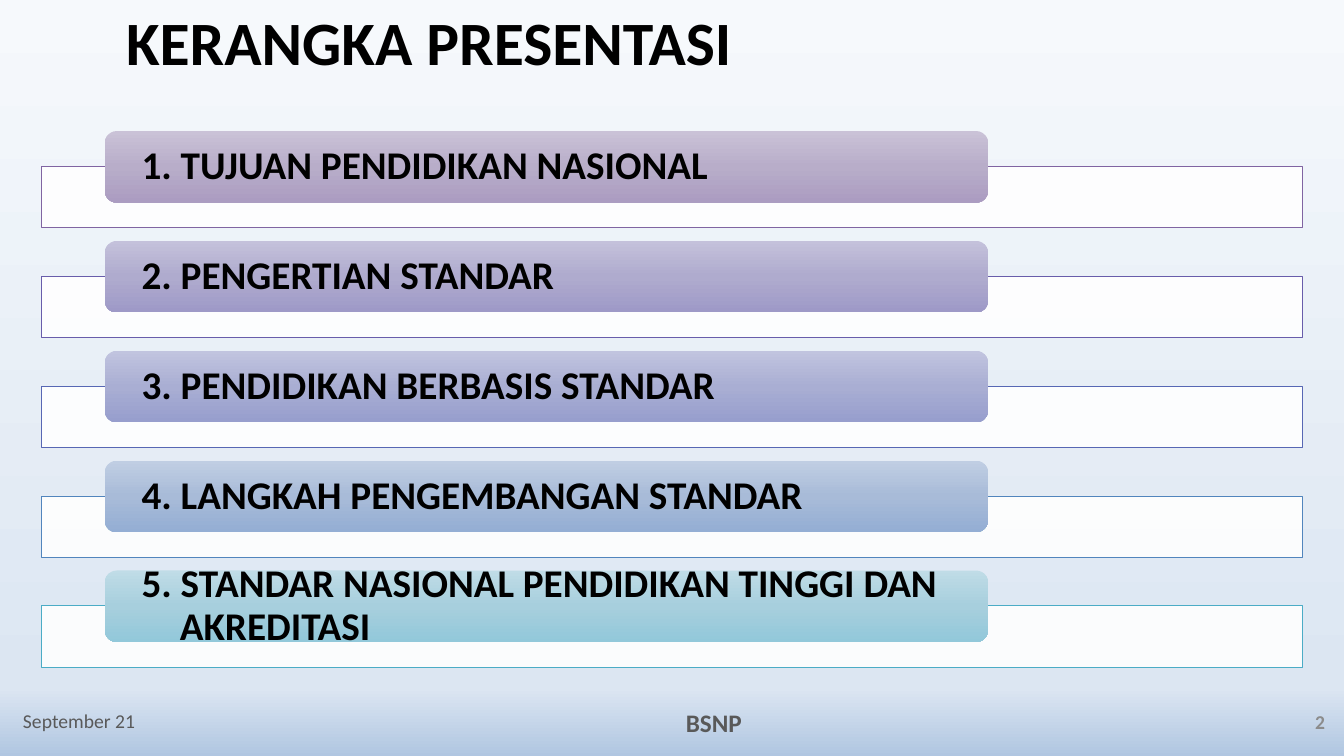
from dataclasses import dataclass

import lxml.etree
import pptx
import pptx.dml.color
import pptx.enum.shapes
import pptx.enum.text
import pptx.oxml.ns
import pptx.util

RGB = pptx.dml.color.RGBColor
ALIGN = pptx.enum.text.PP_ALIGN
SHAPES = pptx.enum.shapes.MSO_SHAPE
qn = pptx.oxml.ns.qn

SLIDE_WIDTH, SLIDE_HEIGHT = 13.33, 7.5
FONT = "Calibri"
BLACK = RGB(0x00, 0x00, 0x00)
WHITE = RGB(0xFF, 0xFF, 0xFF)
FOOTER_GREY = RGB(0x59, 0x59, 0x59)
NUMBER_GREY = RGB(0x8C, 0x8C, 0x8C)
BACKGROUND_STOPS = (
    (0, RGB(0xF6, 0xF9, 0xFC)),
    (91, RGB(0xDC, 0xE6, 0xF2)),
    (100, RGB(0xB0, 0xC6, 0xE1)),
)

# Agenda grid, in inches
FIRST_ROW, ROW_PITCH = 1.3, 1.09
PILL_LEFT, PILL_WIDTH, PILL_HEIGHT = 1.04, 8.76, 0.71
BAR_LEFT, BAR_WIDTH, BAR_HEIGHT, BAR_DROP = 0.41, 12.51, 0.61, 0.35
HANGING = 0.38


@dataclass(frozen=True)
class Topic:
    text: str
    outline: RGB
    top: RGB
    middle: RGB
    bottom: RGB


@dataclass(frozen=True)
class Footer:
    text: str
    left: float
    top: float
    width: float
    size: int
    color: RGB
    bold: bool
    align: ALIGN


TOPICS = (
    Topic("1. TUJUAN PENDIDIKAN NASIONAL", RGB(0x80, 0x64, 0xA2),
          RGB(0xCA, 0xC2, 0xD7), RGB(0xB8, 0xAD, 0xC9), RGB(0xAB, 0x9C, 0xC1)),
    Topic("2. PENGERTIAN STANDAR", RGB(0x68, 0x5D, 0xAB),
          RGB(0xC4, 0xC1, 0xDB), RGB(0xAF, 0xAB, 0xCE), RGB(0x9E, 0x99, 0xC7)),
    Topic("3. PENDIDIKAN BERBASIS STANDAR", RGB(0x57, 0x67, 0xB4),
          RGB(0xC1, 0xC4, 0xDF), RGB(0xA9, 0xAE, 0xD3), RGB(0x97, 0x9E, 0xCD)),
    Topic("4. LANGKAH PENGEMBANGAN STANDAR", RGB(0x51, 0x85, 0xBD),
          RGB(0xC0, 0xCE, 0xE3), RGB(0xA8, 0xBB, 0xD8), RGB(0x94, 0xAE, 0xD4)),
    Topic("5. STANDAR NASIONAL PENDIDIKAN TINGGI DAN AKREDITASI", RGB(0x4B, 0xAC, 0xC6),
          RGB(0xC0, 0xDC, 0xE7), RGB(0xA7, 0xCF, 0xDD), RGB(0x92, 0xC8, 0xDA)),
)
FOOTERS = (
    Footer("September 21", 0.13, 6.95, 3, 14, FOOTER_GREY, False, ALIGN.LEFT),
    Footer("BSNP", 4.83, 6.97, 4.5, 18, FOOTER_GREY, True, ALIGN.CENTER),
    Footer("2", 10.24, 6.96, 3, 14, NUMBER_GREY, True, ALIGN.RIGHT),
)


def box(left: float, top: float, width: float, height: float) -> list[pptx.util.Length]:
    return [pptx.util.Inches(value) for value in (left, top, width, height)]


def write(shape, text: str, *, size: int, color: RGB = BLACK, bold: bool = True,
          align: ALIGN = ALIGN.LEFT, spacing: float = 1.0, side_inset: float = 0.1,
          end_inset: float = 0.05, hanging: float = 0) -> None:
    frame = shape.text_frame
    frame.word_wrap = True
    frame.auto_size = pptx.enum.text.MSO_AUTO_SIZE.NONE
    frame.vertical_anchor = pptx.enum.text.MSO_ANCHOR.MIDDLE
    frame.margin_left = frame.margin_right = pptx.util.Inches(side_inset)
    frame.margin_top = frame.margin_bottom = pptx.util.Inches(end_inset)
    paragraph = frame.paragraphs[0]
    paragraph.alignment = align
    paragraph.line_spacing = spacing
    if hanging:
        properties = paragraph._p.get_or_add_pPr()
        properties.set("marL", str(pptx.util.Inches(hanging)))
        properties.set("indent", str(-pptx.util.Inches(hanging)))
    run = paragraph.add_run()
    run.text = text
    run.font.name = FONT
    run.font.size = pptx.util.Pt(size)
    run.font.bold = bold
    run.font.color.rgb = color


def fill_downwards(fill, owner, stops: tuple[tuple[int, RGB], ...]) -> None:
    """Give the fill found in the owner element a top-to-bottom gradient."""
    fill.gradient()
    fill.gradient_angle = 270
    stop_list = next(owner.iter(qn("a:gsLst")))
    stop_list[:] = []
    for position, color in stops:
        stop = lxml.etree.SubElement(stop_list, qn("a:gs"), pos=str(position * 1000))
        lxml.etree.SubElement(stop, qn("a:srgbClr"), val=str(color))


def add_topic(slide, topic: Topic, row: int) -> None:
    top = FIRST_ROW + row * ROW_PITCH

    # Translucent bar behind the pill
    bar = slide.shapes.add_shape(
        SHAPES.RECTANGLE, *box(BAR_LEFT, top + BAR_DROP, BAR_WIDTH, BAR_HEIGHT))
    bar.shadow.inherit = False
    bar.fill.solid()
    bar.fill.fore_color.rgb = WHITE
    white = next(bar._element.spPr.iter(qn("a:srgbClr")))
    lxml.etree.SubElement(white, qn("a:alpha"), val="90000")
    bar.line.color.rgb = topic.outline
    bar.line.width = pptx.util.Pt(0.5)

    # Pill with the topic's wording
    pill = slide.shapes.add_shape(
        SHAPES.ROUNDED_RECTANGLE, *box(PILL_LEFT, top, PILL_WIDTH, PILL_HEIGHT))
    pill.shadow.inherit = False
    fill_downwards(pill.fill, pill._element.spPr,
                   ((0, topic.top), (50, topic.middle), (100, topic.bottom)))
    pill.line.fill.background()
    write(pill, topic.text, size=28, spacing=0.9, side_inset=0.33, end_inset=0,
          hanging=HANGING)


def main() -> None:
    deck = pptx.Presentation()
    deck.slide_width = pptx.util.Inches(SLIDE_WIDTH)
    deck.slide_height = pptx.util.Inches(SLIDE_HEIGHT)
    slide = deck.slides.add_slide(deck.slide_layouts[5])
    fill_downwards(slide.background.fill, slide._element, BACKGROUND_STOPS)

    # Title
    title = slide.shapes.title
    title.left, title.top, title.width, title.height = box(1.15, 0, 11.51, 0.9)
    write(title, "KERANGKA PRESENTASI", size=44, spacing=0.9)

    # Agenda
    for row, topic in enumerate(TOPICS):
        add_topic(slide, topic, row)

    # Footer
    for footer in FOOTERS:
        label = slide.shapes.add_textbox(*box(footer.left, footer.top, footer.width, 0.4))
        write(label, footer.text, size=footer.size, color=footer.color,
              bold=footer.bold, align=footer.align)

    deck.save("out.pptx")


if __name__ == "__main__":
    main()
